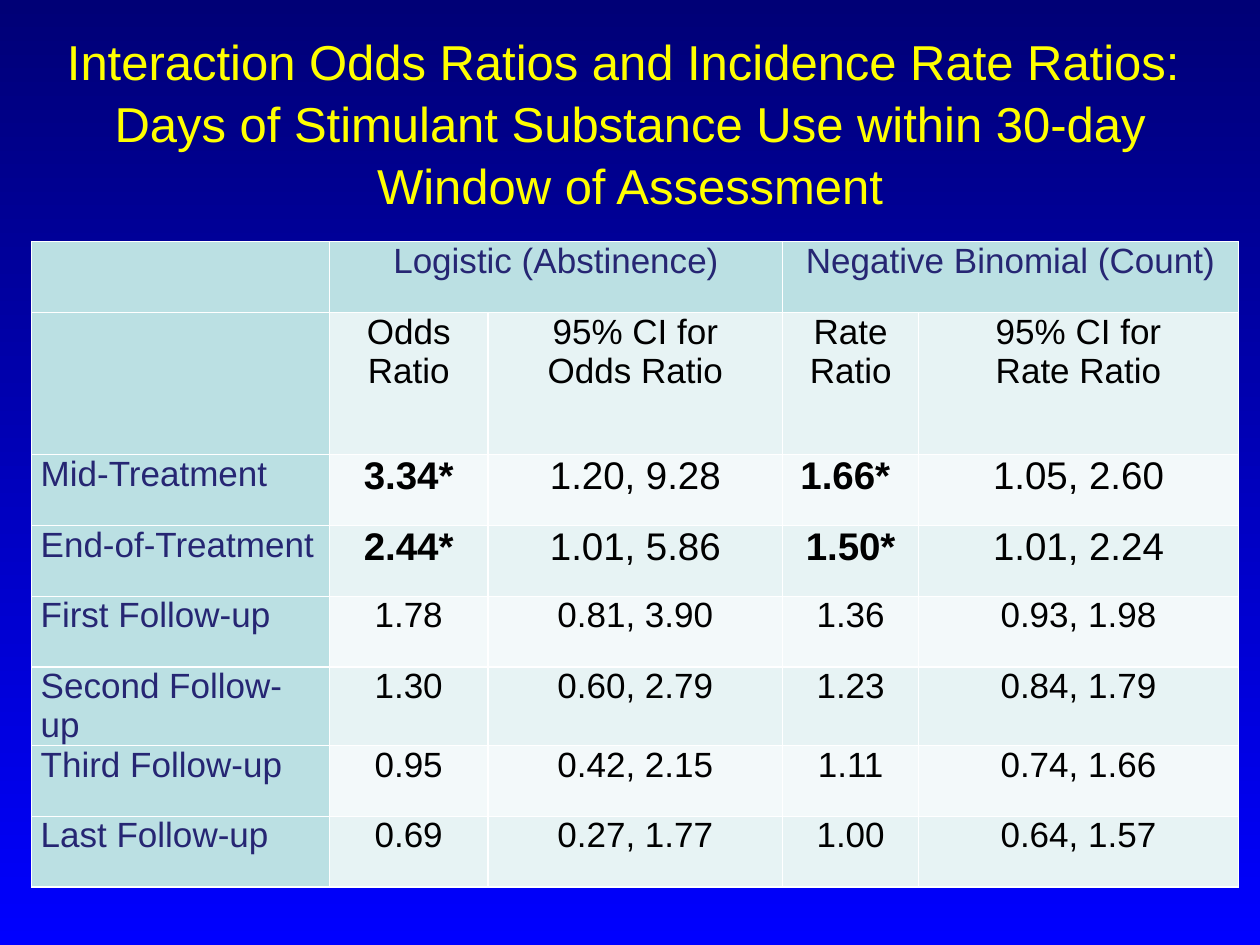
from lxml.etree import SubElement
from pptx import Presentation
from pptx.dml.color import RGBColor
from pptx.enum.text import MSO_ANCHOR as Anchor, MSO_AUTO_SIZE as AutoSize, PP_ALIGN as Align
from pptx.oxml.ns import qn
from pptx.util import Cm, Pt

NAVY, BLACK, YELLOW, WHITE = "262673", "000000", "FFFF00", "FFFFFF"
LABEL_FILL, BAND_FILLS = "BBE0E3", ("F3F9FA", "E7F3F4")
HEADING = ("Interaction Odds Ratios and Incidence Rate Ratios: \v"
           "Days of Stimulant Substance Use within 30-day Window of Assessment")
COLUMN_WIDTHS = (6, 3.2, 5.94, 2.74, 6.45)
ROW_HEIGHT = 1.43
MODELS = ("", "Logistic (Abstinence)", "", "Negative Binomial (Count)", "")
MEASURES = ("", "Odds Ratio", "95% CI for\nOdds Ratio", "Rate Ratio", "95% CI for\nRate Ratio")
ASSESSMENTS = (
    ("Mid-Treatment", "3.34*", "1.20, 9.28", "1.66* ", "1.05, 2.60"),
    ("End-of-Treatment", "2.44*", "1.01, 5.86", "1.50*", "1.01, 2.24"),
    ("First Follow-up", "1.78", "0.81, 3.90", "1.36", "0.93, 1.98"),
    ("Second Follow-up", "1.30", "0.60, 2.79", "1.23", "0.84, 1.79"),
    ("Third Follow-up", "0.95", "0.42, 2.15", "1.11", "0.74, 1.66"),
    ("Last Follow-up", "0.69", "0.27, 1.77", "1.00", "0.64, 1.57"),
)


def paint(color_format, color):
    color_format.rgb = RGBColor.from_string(color)


def write(frame, text, size=20, color=BLACK, bold=False, align=Align.CENTER, spacing=None):
    frame.text = text
    for paragraph in frame.paragraphs:
        paragraph.alignment = align
        paragraph.line_spacing = spacing
        font = paragraph.font
        font.name, font.size, font.bold = "Arial", Pt(size), bold
        paint(font.color, color)
        for run in paragraph.runs:
            run.font.name, run.font.size, run.font.bold = "Arial", Pt(size), bold
            paint(run.font.color, color)


def add_borders(cell, width=1):
    properties = cell._tc.get_or_add_tcPr()
    for position, side in enumerate(("lnL", "lnR", "lnT", "lnB")):
        border = SubElement(properties, qn(f"a:{side}"), w=str(Pt(width)))
        fill = SubElement(border, qn("a:solidFill"))
        SubElement(fill, qn("a:srgbClr"), val=WHITE)
        properties.insert(position, border)


def fill_background(slide):
    fill = slide.background.fill
    fill.gradient()
    fill.gradient_angle = 270
    for stop, color in zip(fill.gradient_stops, ("000076", "0000FF")):
        paint(stop.color, color)


def place_heading(slide, left, top, width, height):
    heading = slide.shapes.title
    heading.left, heading.top = Cm(left), Cm(top)
    heading.width, heading.height = Cm(width), Cm(height)
    frame = heading.text_frame
    frame.word_wrap, frame.auto_size = True, AutoSize.NONE
    frame.vertical_anchor = Anchor.MIDDLE
    frame.margin_top, frame.margin_bottom = Cm(0.33), Cm(0.13)
    write(frame, HEADING, size=28, color=YELLOW, spacing=1.05)


def fill_cell(cell, text, fill, **text_format):
    cell.margin_left = cell.margin_right = Cm(0.18)
    cell.margin_top = cell.margin_bottom = 0
    write(cell.text_frame, text, **text_format)
    cell.fill.solid()
    paint(cell.fill.fore_color, fill)
    add_borders(cell)


def place_ratios(slide, left, top, width):
    rows = (MODELS, MEASURES) + ASSESSMENTS
    heights = [ROW_HEIGHT * (2 if row is MEASURES else 1) for row in rows]
    ratios = slide.shapes.add_table(len(rows), len(COLUMN_WIDTHS), Cm(left), Cm(top),
                                    Cm(width), Cm(sum(heights))).table
    for column, share in zip(ratios.columns, COLUMN_WIDTHS):
        column.width = Cm(width * share / sum(COLUMN_WIDTHS))
    for r, (row, height) in enumerate(zip(rows, heights)):
        ratios.rows[r].height = Cm(height)
        for c, text in enumerate(row):
            is_label = r == 0 or c == 0
            is_significant = "*" in row[1] and c > 0
            fill_cell(ratios.cell(r, c), text,
                      LABEL_FILL if is_label else BAND_FILLS[r % 2],
                      size=22 if is_significant else 20,
                      color=NAVY if is_label else BLACK,
                      bold="*" in text,
                      align=Align.LEFT if c == 0 else Align.CENTER)
    for c in (1, 3):
        ratios.cell(0, c).merge(ratios.cell(0, c + 1))


def main():
    deck = Presentation()
    deck.slide_width, deck.slide_height = Cm(25.4), Cm(19.05)
    slide = deck.slides.add_slide(deck.slide_layouts[5])
    fill_background(slide)
    place_heading(slide, 0.85, 0.76, 23.7, 3.18)
    place_ratios(slide, 0.64, 4.87, 24.33)
    deck.save("out.pptx")


if __name__ == "__main__":
    main()
